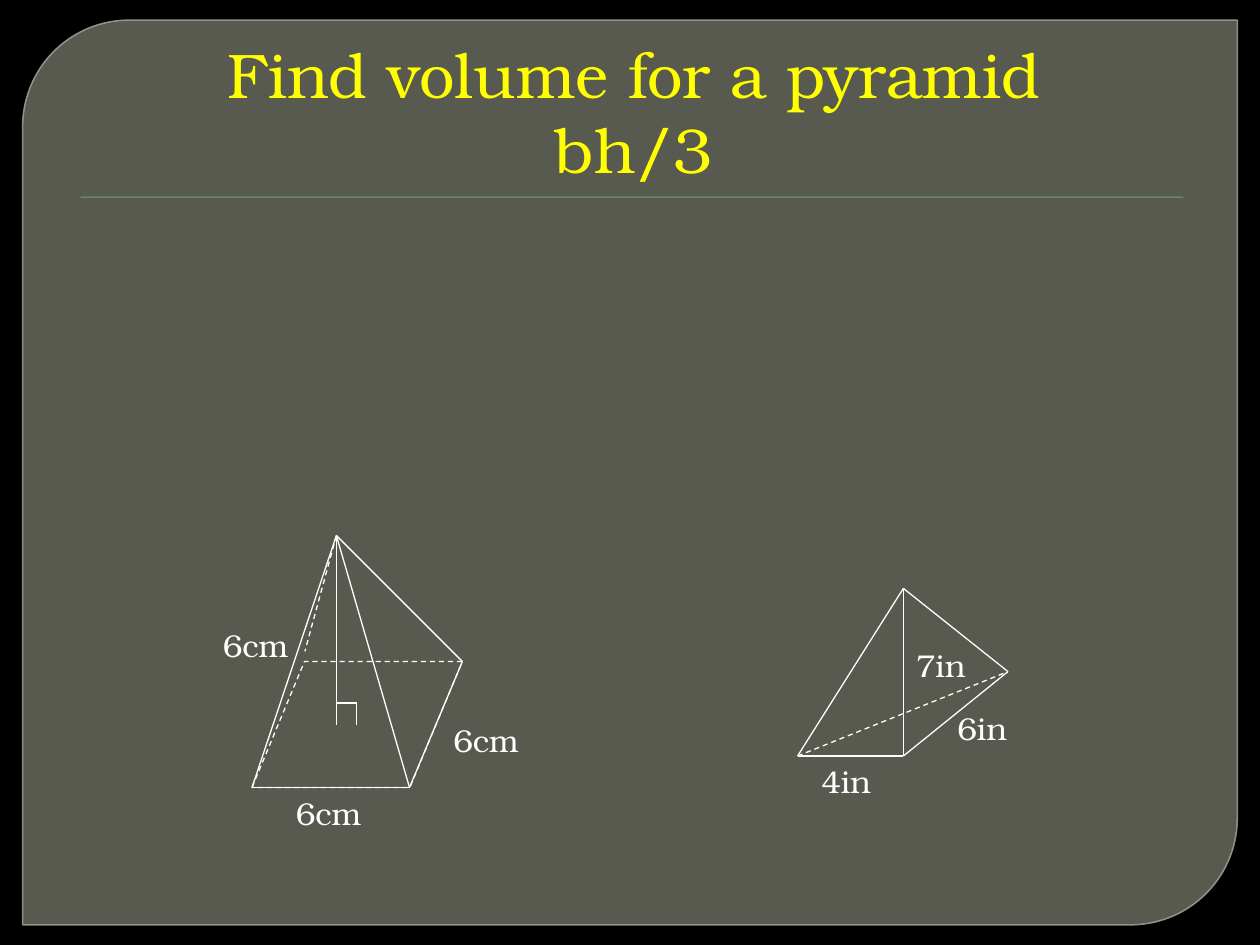
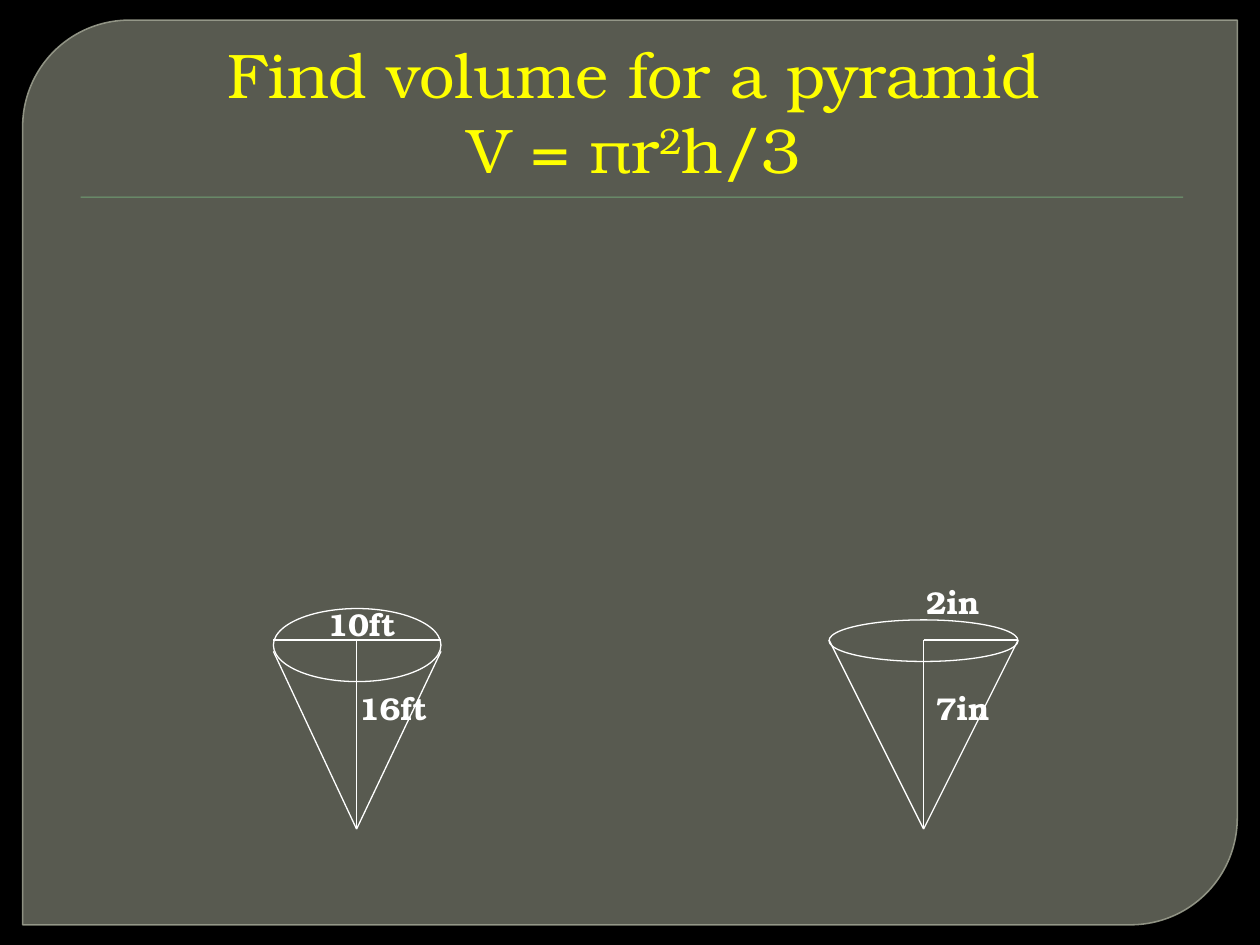
from lxml import etree
from pptx import Presentation
from pptx.dml.color import RGBColor
from pptx.enum.dml import MSO_LINE
from pptx.enum.shapes import MSO_CONNECTOR, MSO_SHAPE
from pptx.enum.text import MSO_ANCHOR, MSO_AUTO_SIZE, PP_ALIGN
from pptx.oxml.ns import qn
from pptx.util import Inches, Pt

FONT = "TeX Gyre Bonum"
BLACK, WHITE, YELLOW = "000000", "FFFFFF", "FFFF00"
PANEL, PANEL_EDGE, RULE = "888B7B", "9DA090", "72A376"


def rgb(color):
    """Turn a hex string into a colour."""
    return RGBColor.from_string(color)


def set_alpha(fill_format, percent):
    """Make a solid fill partly transparent."""
    fill = fill_format.find(qn("a:solidFill"))
    etree.SubElement(fill[0], qn("a:alpha")).set("val", str(percent * 1000))


def add_run(p, text, size, color, bold=False, raised=False):
    """Add one formatted run to a paragraph."""
    r = p.add_run()
    r.text = text
    r.font.name, r.font.size, r.font.bold = FONT, Pt(size), bold
    r.font.color.rgb = rgb(color)
    if raised:
        r.font._element.set("baseline", "30000")


def add_shape(s, kind, box, fill=None, line=None, width=0.75):
    """Add a preset shape without a shadow."""
    sp = s.shapes.add_shape(kind, *map(Inches, box))
    sp.shadow.inherit = False
    if fill:
        sp.fill.solid()
        sp.fill.fore_color.rgb = rgb(fill)
    else:
        sp.fill.background()
    if line:
        sp.line.color.rgb = rgb(line)
        sp.line.width = Pt(width)
    else:
        sp.line.fill.background()
    return sp


def add_line(s, start, end, dashed=False):
    """Draw a thin white edge between two points."""
    line = s.shapes.add_connector(MSO_CONNECTOR.STRAIGHT, *map(Inches, start + end))
    line.line.color.rgb = rgb(WHITE)
    line.line.width = Pt(0.75)
    if dashed:
        line.line.dash_style = MSO_LINE.DASH
    etree.SubElement(line._element.spPr, qn("a:effectLst"))


def add_label(s, text, left, top, width, bold=False):
    """Add a measurement beside an edge."""
    box = s.shapes.add_textbox(*map(Inches, (left, top, width, 0.4)))
    tf = box.text_frame
    tf.word_wrap = True
    add_run(tf.paragraphs[0], text, 18, WHITE, bold)


def add_slide(prs, formula):
    """Add a slide with the panel, the rule and a two-line title."""
    s = prs.slides.add_slide(prs.slide_layouts[5])
    s.background.fill.solid()
    s.background.fill.fore_color.rgb = rgb(BLACK)
    panel = add_shape(s, MSO_SHAPE.ROUND_2_DIAG_RECTANGLE, (0.18, 0.16, 9.64, 7.18),
                      PANEL, PANEL_EDGE, 0.87)
    panel.adjustments[0], panel.adjustments[1] = 0.118, 0
    set_alpha(panel._element.spPr, 65)
    set_alpha(panel.line._ln, 88)
    add_shape(s, MSO_SHAPE.RECTANGLE, (0.64, 1.56, 8.75, 0.01), RULE)

    title = s.shapes.title
    title.left, title.top, title.width, title.height = map(Inches, (0.5, 0.28, 9, 1.25))
    s.shapes._spTree.append(title._element)
    tf = title.text_frame
    tf.word_wrap, tf.auto_size = True, MSO_AUTO_SIZE.NONE
    tf.vertical_anchor = MSO_ANCHOR.BOTTOM
    tf.margin_left = Inches(0.16)
    p = tf.paragraphs[0]
    p.alignment = PP_ALIGN.CENTER
    add_run(p, "Find volume for a pyramid", 36, YELLOW)
    p.add_line_break()
    for text, raised in formula:
        add_run(p, text, 36, YELLOW, raised=raised)
    return s


def add_square_pyramid(s):
    """Draw the square pyramid with its height and right angle."""
    apex, front_left, front_right = (2.67, 4.25), (2, 6.25), (3.25, 6.25)
    back_right, back_left = (3.67, 5.25), (2.42, 5.17)
    base = add_shape(s, MSO_SHAPE.PARALLELOGRAM, (2, 5.25, 1.67, 1), line=WHITE)
    base.adjustments[0] = 0.417
    base.line.dash_style = MSO_LINE.DASH
    for corner in (front_left, front_right, back_right):
        add_line(s, apex, corner)
    add_line(s, apex, back_left, dashed=True)
    add_line(s, front_left, front_right)
    add_line(s, front_right, back_right)
    add_line(s, apex, (2.67, 5.75))
    add_line(s, (2.67, 5.58), (2.83, 5.58))
    add_line(s, (2.83, 5.58), (2.83, 5.75))
    for left, top, width in ((2.25, 6.25, 0.83), (3.5, 5.67, 1), (1.67, 4.92, 1.08)):
        add_label(s, "6cm", left, top, width)


def add_triangular_pyramid(s):
    """Draw the triangular pyramid with its hidden edge dashed."""
    apex, left, front, right = (7.17, 4.67), (6.33, 6), (7.17, 6), (8, 5.33)
    for corner in (left, front, right):
        add_line(s, apex, corner)
    add_line(s, left, front)
    add_line(s, front, right)
    add_line(s, left, right, dashed=True)
    add_label(s, "4in", 6.42, 6, 1)
    add_label(s, "6in", 7.5, 5.58, 1)
    add_label(s, "7in", 7.17, 5.08, 0.75)


def add_cone(s, rim, side_top, center_x, measure_from):
    """Draw an inverted cone with its height and a line across its rim."""
    left, _, width, _ = rim
    right, tip, rim_y = left + width, (center_x, 6.58), 5.08
    add_shape(s, MSO_SHAPE.OVAL, rim, line=WHITE)
    for x in (left, right):
        add_line(s, tip, (x, side_top))
    add_line(s, tip, (center_x, rim_y))
    add_line(s, (measure_from, rim_y), (right, rim_y))


def main():
    """Build the two volume exercises."""
    prs = Presentation()
    prs.slide_width, prs.slide_height = Inches(10), Inches(7.5)

    s = add_slide(prs, [("bh/3", False)])
    add_square_pyramid(s)
    add_triangular_pyramid(s)

    s = add_slide(prs, [("V = πr", False), ("2", True), ("h/3", False)])
    add_cone(s, (2.17, 4.83, 1.33, 0.58), 5.17, 2.83, measure_from=2.17)
    add_cone(s, (6.58, 4.92, 1.5, 0.33), 5.08, 7.33, measure_from=7.33)
    for text, left, top, width in (("10ft", 2.5, 4.75, 1.08), ("16ft", 2.75, 5.42, 1.17),
                                   ("2in", 7.25, 4.58, 0.92), ("7in", 7.33, 5.42, 1.17)):
        add_label(s, text, left, top, width, bold=True)

    prs.save("out.pptx")


if __name__ == "__main__":
    main()
